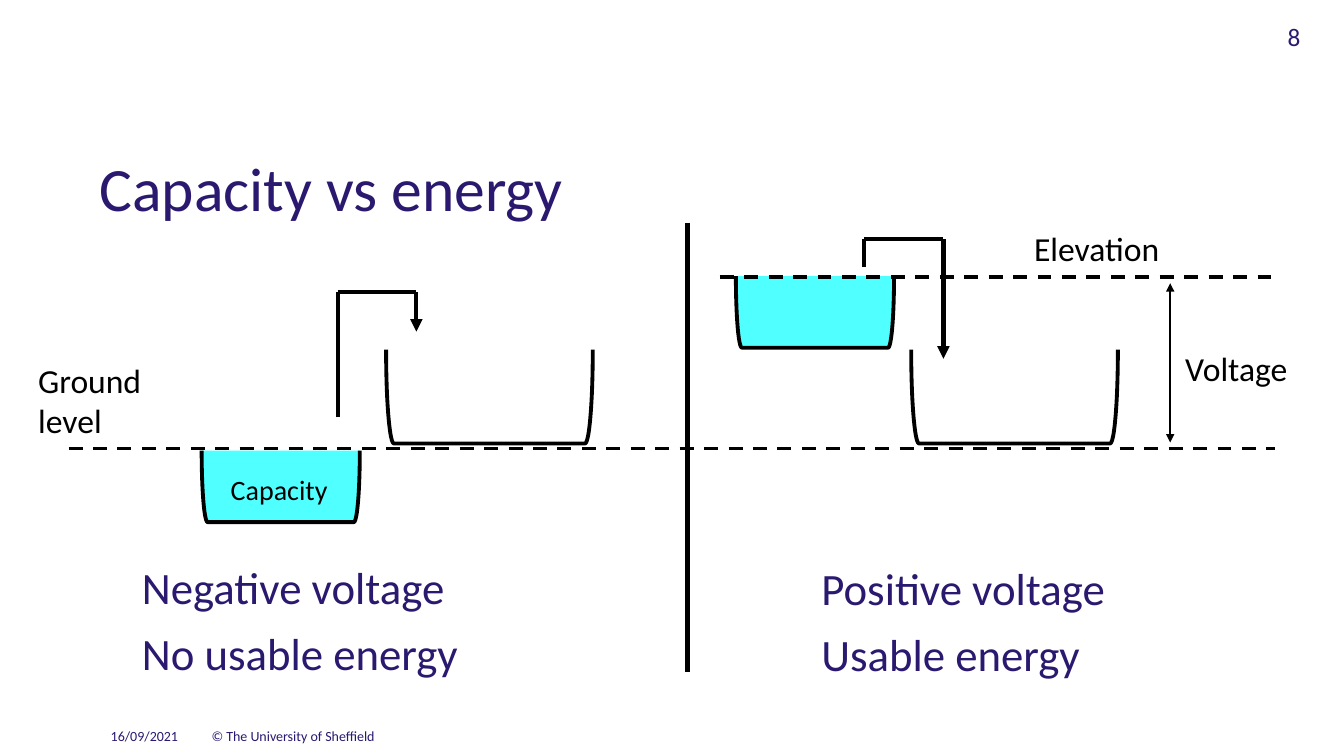
from lxml import etree
from pptx import Presentation
from pptx import util as u
from pptx.dml import color
from pptx.enum import dml, shapes, text
from pptx.oxml import ns

COLORS = {"ink": "2A196F", "black": "000000", "water": "50FFFF"}

presentation = Presentation()
presentation.slide_width = u.Pt(960)
presentation.slide_height = u.Pt(540)
slide = presentation.slides.add_slide(presentation.slide_layouts[6])


def add_text(content, left, top, width, height, size, ink="black", align="LEFT",
             anchor="TOP", line_spacing=None, space_before=0):
    box = slide.shapes.add_textbox(u.Pt(left), u.Pt(top), u.Pt(width), u.Pt(height))
    frame = box.text_frame
    frame.word_wrap = True
    frame.vertical_anchor = getattr(text.MSO_ANCHOR, anchor)
    frame.text = content
    for index, paragraph in enumerate(frame.paragraphs):
        paragraph.alignment = getattr(text.PP_ALIGN, align)
        paragraph.space_before = u.Pt(space_before if index else 0)
        if line_spacing:
            paragraph.line_spacing = line_spacing
        paragraph.font.name = "Calibri"
        paragraph.font.size = u.Pt(size)
        paragraph.font.color.rgb = color.RGBColor.from_string(COLORS[ink])


def add_line(parent, start, end, weight, dashed=False, arrows=()):
    connector = parent.shapes.add_connector(
        shapes.MSO_CONNECTOR.STRAIGHT, *[u.Pt(value) for value in (*start, *end)])
    connector.line.width = u.Pt(weight)
    connector.line.color.rgb = color.RGBColor.from_string(COLORS["black"])
    if dashed:
        connector.line.dash_style = dml.MSO_LINE.DASH
    outline = connector.line._get_or_add_ln()
    for arrow in arrows:
        etree.SubElement(outline, ns.qn(f"a:{arrow}"), type="triangle")
    etree.SubElement(connector.element.spPr, ns.qn("a:effectLst"))


add_text("Capacity vs energy", 64, 108, 864, 60, 44, ink="ink", anchor="MIDDLE", line_spacing=0.83)
add_text("16/09/2021", 72, 516.2, 96, 24, 10, ink="ink")
add_text("© The University of Sheffield", 144, 516.2, 544, 24, 10, ink="ink")
add_text("8", 736, 12, 200, 36, 18, ink="ink", align="RIGHT")

for content, left, top, width in [
    ("Negative voltage\nNo usable energy", 94.3, 396, 266.4),
    ("Positive voltage\nUsable energy", 579.6, 396.7, 234),
]:
    add_text(content, left, top, width, 98, 32, ink="ink", space_before=9)

for left, top, depth, span, fill in [
    (175, 290.9, 51.1, 113, "water"),
    (556.6, 166.3, 51.1, 113, "water"),
    (316.1, 209.5, 67, 147.6, None),
    (691.2, 209.5, 67, 147.6, None),
]:
    tank = slide.shapes.add_shape(
        shapes.MSO_SHAPE.LEFT_BRACKET, u.Pt(left), u.Pt(top), u.Pt(depth), u.Pt(span))
    tank.rotation = 270
    tank.shadow.inherit = False
    tank.line.width = u.Pt(2.75)
    tank.line.color.rgb = color.RGBColor.from_string(COLORS["black"])
    if fill:
        tank.fill.solid()
        tank.fill.fore_color.rgb = color.RGBColor.from_string(COLORS[fill])
    else:
        tank.fill.background()

for inlet_x, outlet_x, pipe_top, inlet_y, outlet_y in [
    (241.2, 297.4, 208.8, 298.1, 236.9),
    (617, 673.9, 170.6, 190.8, 256.3),
]:
    pipe = slide.shapes.add_group_shape()
    add_line(pipe, (inlet_x, inlet_y), (inlet_x, pipe_top), 3)
    add_line(pipe, (inlet_x, pipe_top), (outlet_x, pipe_top), 3)
    add_line(pipe, (outlet_x, pipe_top), (outlet_x, outlet_y), 3, arrows=["tailEnd"])

add_line(slide, (49, 320.4), (910.8, 320.4), 2.5, dashed=True)
add_line(slide, (491, 159.1), (491, 480.2), 3.25)
add_line(slide, (514.1, 198), (915.1, 198), 2.5, dashed=True)
add_line(slide, (835.9, 316.1), (835.9, 202.3), 1.5, arrows=["headEnd", "tailEnd"])

for content, left, top, width, height, size in [
    ("Ground level", 20.2, 253.4, 95.8, 67, 24),
    ("Capacity", 157.7, 334.1, 99.4, 31.7, 20),
    ("Elevation", 731.5, 159.1, 108.7, 36, 24),
    ("Voltage", 839.5, 244.8, 94.3, 36, 24),
]:
    add_text(content, left, top, width, height, size)

presentation.save("out.pptx")
